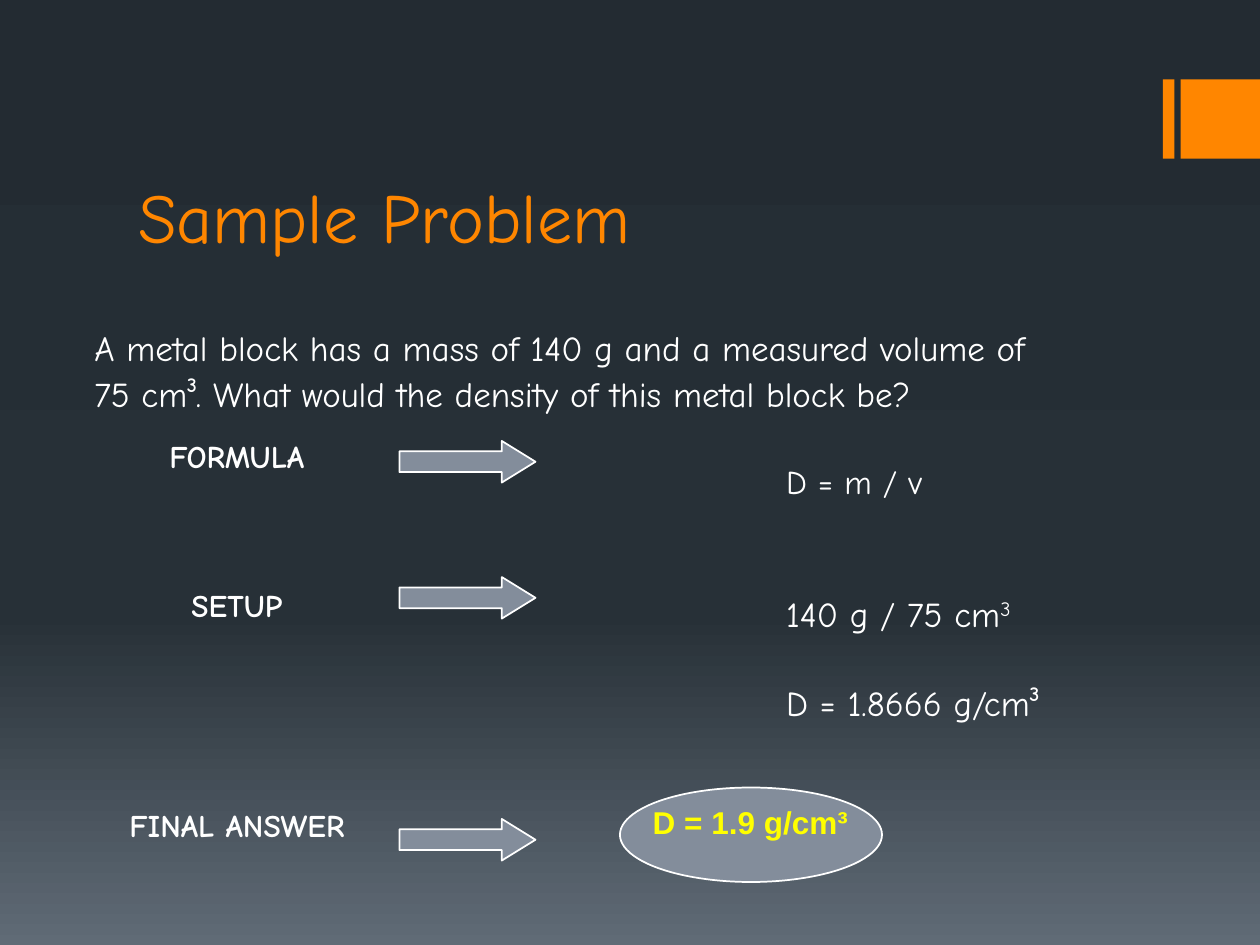
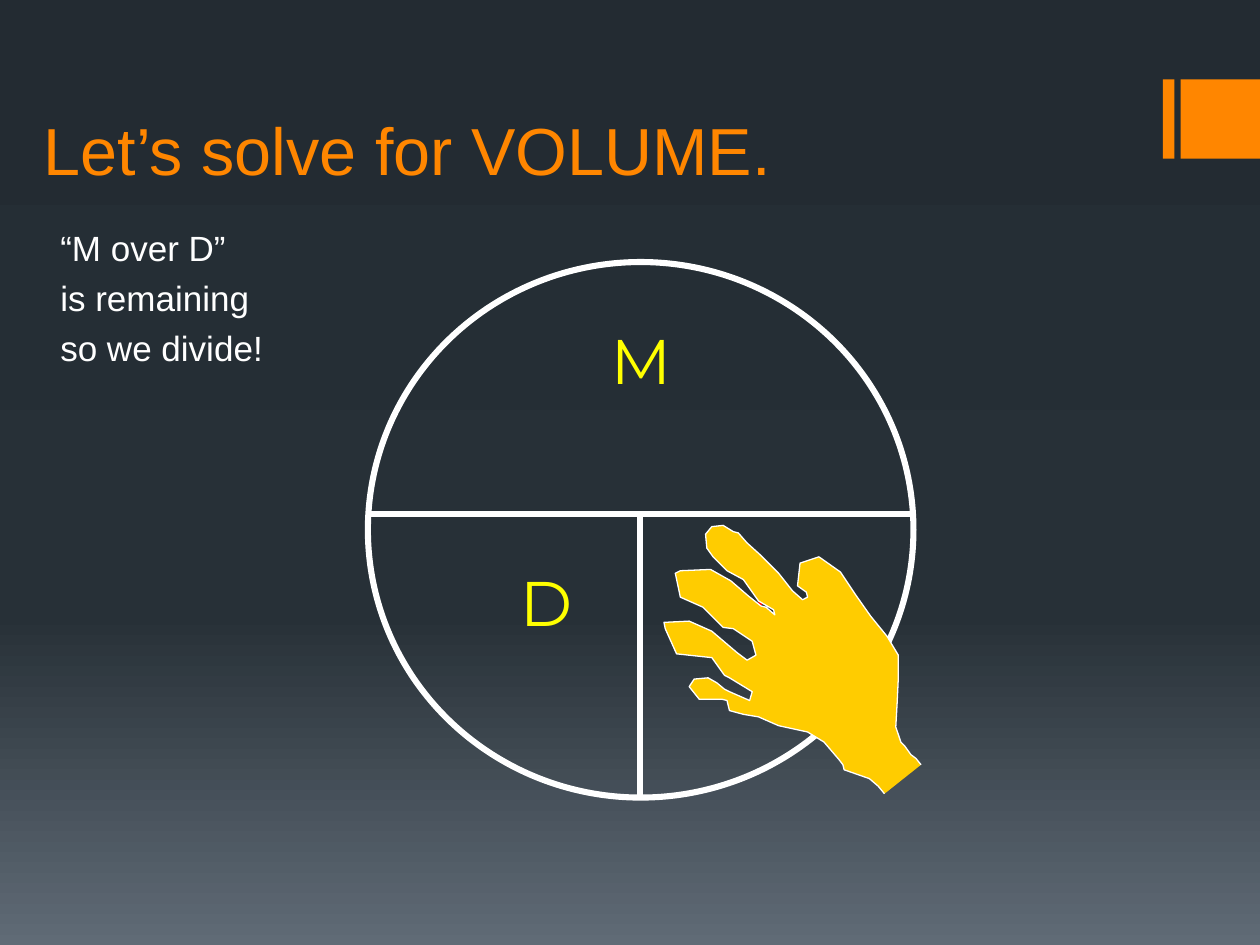
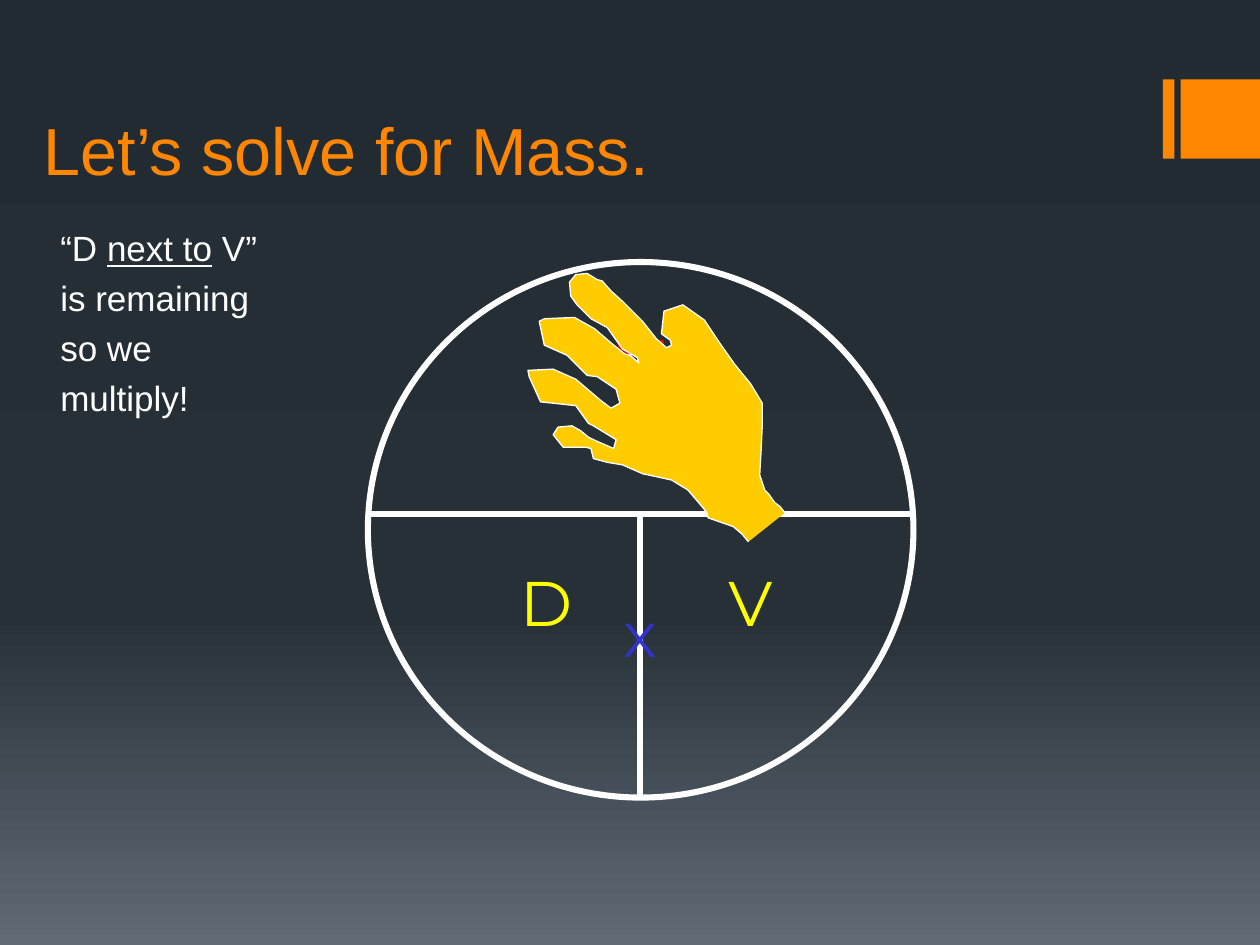
"""Builds three density lesson slides: a sample problem and two formula wheels."""
import copy

import pptx
import pptx.dml.color
import pptx.enum.shapes
import pptx.enum.text
import pptx.oxml
import pptx.util
from pptx.util import Inches

RGB = pptx.dml.color.RGBColor
SHAPE = pptx.enum.shapes.MSO_SHAPE
ALIGN = pptx.enum.text.PP_ALIGN
ANCHOR = pptx.enum.text.MSO_ANCHOR
ORANGE = RGB(0xFF, 0x86, 0x00)
WHITE = RGB(0xFF, 0xFF, 0xFF)
YELLOW = RGB(0xFF, 0xFF, 0x00)
RED = RGB(0xFF, 0x00, 0x00)
BLUE = RGB(0x33, 0x33, 0xCC)
GOLD = RGB(0xFF, 0xCC, 0x00)
STEEL = RGB(0x83, 0x8D, 0x9B)
BACKDROP = [(0, RGB(0x23, 0x2B, 0x32)), (0.65, RGB(0x27, 0x30, 0x37)),
            (1, RGB(0x60, 0x6B, 0x76))]
COMIC, ARIAL, MONTSERRAT = "Comic Neue", "Arial", "Montserrat"

HAND = [
    (206, 190), (202, 185), (198, 182), (193, 175), (190, 172), (186, 160),
    (187, 142), (188, 121), (188, 103), (179, 88), (166, 72), (154, 55),
    (142, 37), (125, 25), (110, 30), (108, 48), (115, 53), (116, 57),
    (112, 59), (104, 52), (93, 38), (78, 23), (68, 14), (61, 6), (57, 5),
    (49, 0), (40, 1), (35, 7), (36, 18), (41, 25), (52, 36), (65, 43),
    (77, 60), (89, 67), (90, 71), (83, 65), (79, 64), (69, 56), (55, 44),
    (39, 35), (15, 36), (11, 38), (15, 57), (33, 65), (49, 81), (57, 82),
    (72, 92), (75, 103), (68, 107), (60, 101), (40, 84), (22, 76), (2, 77),
    (3, 82), (12, 102), (40, 105), (50, 119), (54, 121), (72, 132),
    (70, 139), (54, 132), (50, 130), (44, 125), (37, 121), (26, 122),
    (22, 128), (30, 138), (48, 138), (52, 139), (54, 147), (65, 150),
    (77, 152), (93, 159), (116, 164), (129, 172), (141, 186), (144, 190),
    (145, 194), (165, 201), (172, 207), (177, 213)]


class Deck:
    """Holds the shared style and the current slide."""

    def __init__(self):
        self.prs = pptx.Presentation()
        self.prs.slide_width, self.prs.slide_height = Inches(10), Inches(7.5)
        master = self.prs.slide_master
        fill = master.background.fill
        fill.gradient()
        fill.gradient_angle = 270
        stops = master.element.xpath(".//p:bg//a:gsLst")[0]
        stops.append(copy.deepcopy(stops[0]))
        for stop, (position, color) in zip(fill.gradient_stops, BACKDROP):
            stop.position = position
            stop.color.rgb = color

    def new_slide(self):
        self.s = self.prs.slides.add_slide(self.prs.slide_layouts[6])
        for left, width in ((9.23, 0.09), (9.37, 0.63)):
            self.shape(SHAPE.RECTANGLE, left, 0.63, width, 0.63, ORANGE)

    def style(self, sp, fill=None, line=None, weight=1):
        sp.shadow.inherit = False
        if fill is None:
            sp.fill.background()
        else:
            sp.fill.solid()
            sp.fill.fore_color.rgb = fill
        if line is None:
            sp.line.fill.background()
        else:
            sp.line.color.rgb = line
            sp.line.width = pptx.util.Pt(weight)

    def shape(self, kind, x, y, w, h, fill=None, line=None, weight=1):
        sp = self.s.shapes.add_shape(kind, Inches(x), Inches(y), Inches(w), Inches(h))
        self.style(sp, fill, line, weight)
        return sp

    def text(self, lines, x, y, w, h, size, font, color=WHITE, bold=False,
             align=ALIGN.LEFT, anchor=ANCHOR.TOP, wrap=True, spacing=None):
        tf = self.s.shapes.add_textbox(Inches(x), Inches(y), Inches(w), Inches(h)).text_frame
        tf.word_wrap = wrap
        tf.vertical_anchor = anchor
        tf.text = "\n".join(lines)
        for i, p in enumerate(tf.paragraphs):
            p.alignment = align
            p.line_spacing = spacing
            if i:
                p.space_before = pptx.util.Pt(4.6)
            p.font.size = pptx.util.Pt(size)
            p.font.name = font
            p.font.bold = bold
            p.font.color.rgb = color
        return tf

    def title(self, words, x, y, w, h, size, font):
        self.text([words], x, y, w, h, size, font, ORANGE, anchor=ANCHOR.BOTTOM)

    def step(self, label, label_y, arrow_y):
        self.text([label], 0.92, label_y, 1.92, 0.4, 18, COMIC, bold=True, align=ALIGN.CENTER)
        arrow = self.shape(SHAPE.RIGHT_ARROW, 3.17, arrow_y, 1.08, 0.33, STEEL, WHITE)
        arrow.adjustments[1] = 0.81

    def letter(self, char, x, y, w, h, color):
        self.text([char], x, y, w, h, 36, MONTSERRAT, color, align=ALIGN.CENTER, wrap=False)

    def line(self, x1, y1, x2, y2):
        c = self.s.shapes.add_connector(pptx.enum.shapes.MSO_CONNECTOR.STRAIGHT,
                                        Inches(x1), Inches(y1), Inches(x2), Inches(y2))
        c.line.color.rgb = WHITE
        c.line.width = pptx.util.Pt(3.25)
        c._element.spPr.append(pptx.oxml.parse_xml(
            '<a:effectLst xmlns:a="http://schemas.openxmlformats.org/drawingml/2006/main"/>'))

    def hand(self, x, y):
        start, *rest = HAND
        builder = self.s.shapes.build_freeform(*start, scale=Inches(0.01))
        builder.add_line_segments(rest, close=False)
        self.style(builder.convert_to_shape(Inches(x), Inches(y)), GOLD, WHITE, 0.75)

    def wheel(self, title, lines, covered, hand_x, hand_y):
        self.new_slide()
        self.title(title, 0.25, 0.3, 9.5, 1.25, 38, ARIAL)
        tf = self.text(lines, 0.38, 1.75, 9.12, 4.95, 20, ARIAL)
        self.shape(SHAPE.OVAL, 2.92, 2.08, 4.33, 4.25, None, WHITE, 3.5)
        for char, x, y, w in (("M", 4.75, 2.5, 0.67), ("D", 4, 4.42, 0.67),
                              ("V", 5.58, 4.42, 0.75)):
            self.letter(char, x, y, w, 1.08, RED if char == covered else YELLOW)
        self.line(2.92, 4.08, 7.25, 4.08)
        self.line(5.08, 4.08, 5.08, 6.33)
        self.hand(hand_x, hand_y)
        return tf


def sample_problem(deck):
    deck.new_slide()
    deck.title("Sample Problem", 1, 1.17, 8, 0.92, 40, COMIC)
    deck.text(["A metal block has a mass of 140 g and a measured volume of",
               "75 cm³. What would the density of this metal block be?"],
              0.65, 2.58, 8.93, 0.9, 20, COMIC, spacing=0.9)
    for words, y, size in (("D = m / v", 3.65, 19), ("140 g / 75 cm", 4.69, 20),
                           ("D = 1.8666 g/cm³", 5.4, 20)):
        tf = deck.text([words], 6.14, y, 3.4, 0.45, size, COMIC, spacing=0.9)
        if words.startswith("140"):
            r = tf.paragraphs[0].add_run()
            r.text = "3"
            r.font._element.set("baseline", "30000")
    for label, label_y, arrow_y in (("FORMULA", 3.42, 3.5), ("SETUP", 4.6, 4.58),
                                    ("FINAL ANSWER", 6.35, 6.5)):
        deck.step(label, label_y, arrow_y)
    deck.shape(SHAPE.OVAL, 4.92, 6.25, 2.08, 0.75, STEEL, WHITE)
    deck.text(["D = 1.9 g/cm³"], 5.08, 6.38, 1.75, 0.79, 18, ARIAL, YELLOW,
              bold=True, align=ALIGN.CENTER, spacing=0.8)


def main():
    deck = Deck()
    sample_problem(deck)
    deck.wheel("Let’s solve for VOLUME.", ["“M over D”", "is remaining", "so we divide!"],
               "V", 5.25, 4.17)
    tf = deck.wheel("Let’s solve for Mass.", ["“D ", "is remaining", "so we", "multiply!"],
                    "M", 4.17, 2.17)
    p = tf.paragraphs[0]
    for words, underline in (("next to", True), (" V”", False)):
        r = p.add_run()
        r.text = words
        r.font.underline = underline
    deck.letter("x", 4.83, 4.67, 0.5, 0.46, BLUE)
    deck.prs.save("out.pptx")


if __name__ == "__main__":
    main()
